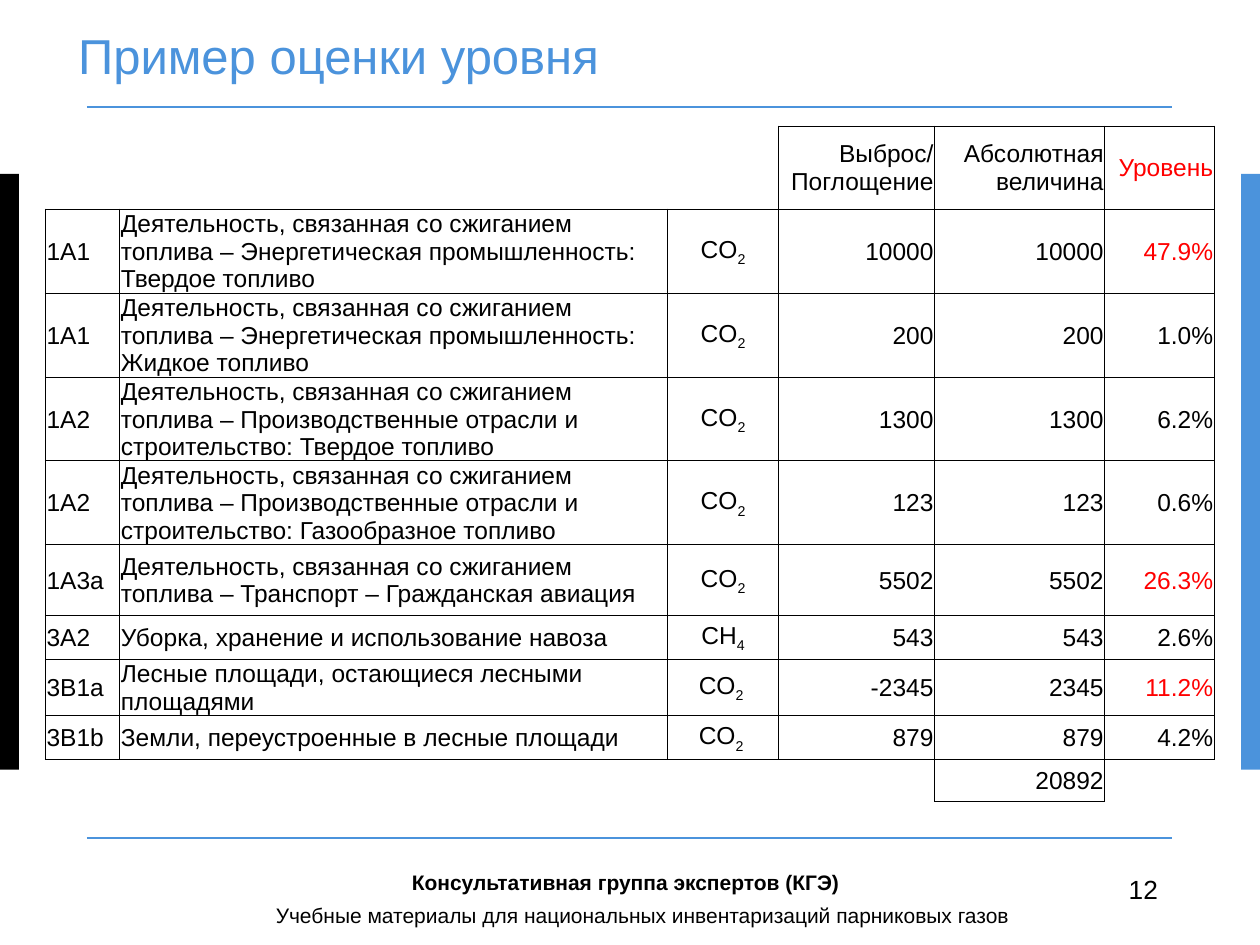
"""Build the slide with the worked example of a key category level assessment."""
import lxml.etree
import pptx
import pptx.dml.color
import pptx.enum.shapes
import pptx.enum.text
import pptx.oxml
import pptx.oxml.ns
import pptx.util

Inches = pptx.util.Inches
ALIGN = pptx.enum.text.PP_ALIGN
MIDDLE = pptx.enum.text.MSO_ANCHOR.MIDDLE
BLACK, BLUE, RED = "000000", "4B93DC", "FF0000"


def colour(value):
    return pptx.dml.color.RGBColor.from_string(value)


def add_run(paragraph, text, size, hue=BLACK, bold=False):
    run = paragraph.add_run()
    run.text = text
    values = {"name": "Arial", "size": pptx.util.Pt(size), "bold": bold}
    for attribute, value in values.items():
        setattr(run.font, attribute, value)
    run.font.color.rgb = colour(hue)
    return run


presentation = pptx.Presentation()
presentation.slide_width = Inches(10)
presentation.slide_height = Inches(7.5)
slide = presentation.slides.add_slide(presentation.slide_layouts[5])

for left, hue in ((0, BLACK), (9.85, BLUE)):
    side_bar = slide.shapes.add_shape(
        pptx.enum.shapes.MSO_SHAPE.RECTANGLE,
        Inches(left), Inches(1.38), Inches(0.15), Inches(4.73))
    side_bar.shadow.inherit = False
    side_bar.fill.solid()
    side_bar.fill.fore_color.rgb = colour(hue)
    side_bar.line.fill.background()

for y in (0.85, 6.65):
    rule = slide.shapes.add_connector(
        pptx.enum.shapes.MSO_CONNECTOR.STRAIGHT,
        Inches(0.69), Inches(y), Inches(9.3), Inches(y))
    rule.line.color.rgb = colour(BLUE)
    rule.line.width = pptx.util.Pt(1)
    lxml.etree.SubElement(rule._element.spPr, pptx.oxml.ns.qn("a:effectLst"))

fuel = "Деятельность, связанная со сжиганием топлива – "
energy = fuel + "Энергетическая промышленность: "
industry = fuel + "Производственные отрасли и строительство: "
rows = [
    ("", "", "", "Выброс/ Поглощение", "Абсолютная величина", "Уровень"),
    ("1A1", energy + "Твердое топливо", "CO2", "10000", "10000", "47.9%"),
    ("1A1", energy + "Жидкое топливо", "CO2", "200", "200", "1.0%"),
    ("1A2", industry + "Твердое топливо", "CO2", "1300", "1300", "6.2%"),
    ("1A2", industry + "Газообразное топливо", "CO2", "123", "123", "0.6%"),
    ("1A3a", fuel + "Транспорт – Гражданская авиация", "CO2", "5502", "5502", "26.3%"),
    ("3A2", "Уборка, хранение и использование навоза", "CH4", "543", "543", "2.6%"),
    ("3B1a", "Лесные площади, остающиеся лесными площадями", "CO2 ", "-2345", "2345", "11.2%"),
    ("3B1b", "Земли, переустроенные в лесные площади", "CO2 ", "879", "879", "4.2%"),
    ("", "", "", "", "20892", ""),
]
key_levels = {"Уровень", "47.9%", "26.3%", "11.2%"}
column_widths = [0.59, 4.35, 0.88, 1.24, 1.35, 0.87]
row_heights = [0.66] + [0.56] * 5 + [0.35] * 3 + [0.33]
alignments = [ALIGN.LEFT, ALIGN.LEFT, ALIGN.CENTER] + [ALIGN.RIGHT] * 3
neighbours = {"lnL": (0, -1), "lnR": (0, 1), "lnT": (-1, 0), "lnB": (1, 0)}
filled = {(r, c) for r, row in enumerate(rows) for c, text in enumerate(row) if text}
cell_format = {
    "margin_left": Inches(0.01), "margin_right": Inches(0.01),
    "margin_top": Inches(0.01), "margin_bottom": 0, "vertical_anchor": MIDDLE,
}

assessment = slide.shapes.add_table(
    len(rows), len(column_widths), Inches(0.36), Inches(1),
    Inches(sum(column_widths)), Inches(sum(row_heights))).table
assessment.first_row = False
assessment.horz_banding = False
for column, width in zip(assessment.columns, column_widths):
    column.width = Inches(width)
for table_row, height in zip(assessment.rows, row_heights):
    table_row.height = Inches(height)

for r, row in enumerate(rows):
    for c, text in enumerate(row):
        cell = assessment.cell(r, c)
        for attribute, value in cell_format.items():
            setattr(cell, attribute, value)
        for side, (down, across) in neighbours.items():
            bordered = filled & {(r, c), (r + down, c + across)}
            paint = (f'<a:solidFill><a:srgbClr val="{BLACK}"/></a:solidFill>'
                     if bordered else "<a:noFill/>")
            cell._tc.get_or_add_tcPr().append(pptx.oxml.parse_xml(
                f'<a:{side} {pptx.oxml.ns.nsdecls("a")} w="6350">{paint}</a:{side}>'))
        cell.fill.background()
        if not text:
            continue
        paragraph = cell.text_frame.paragraphs[0]
        paragraph.alignment = alignments[c]
        if c == 2:
            add_run(paragraph, text[:2], 14)
            subscript = add_run(paragraph, text[2:], 14)
            subscript.font._element.set("baseline", "-25000")
        else:
            add_run(paragraph, text, 14, RED if text in key_levels else BLACK)

title = slide.shapes.title
title_place = {"left": 0.62, "top": 0.29, "width": 8.66, "height": 0.55}
for attribute, value in title_place.items():
    setattr(title, attribute, Inches(value))
title_format = {
    "margin_left": 0, "margin_right": 0, "margin_top": 0, "margin_bottom": 0,
    "vertical_anchor": MIDDLE, "word_wrap": True,
    "auto_size": pptx.enum.text.MSO_AUTO_SIZE.NONE,
}
for attribute, value in title_format.items():
    setattr(title.text_frame, attribute, value)
heading = title.text_frame.paragraphs[0]
heading.alignment = ALIGN.LEFT
heading.line_spacing = pptx.util.Pt(15)
add_run(heading, "Пример оценки уровня", 28, BLUE)

footers = [
    ("12", (8.86, 6.88, 0.47, 0.35), 15, False),
    ("Учебные материалы для национальных инвентаризаций парниковых газов",
     (2.09, 7.11, 6.52, 0.32), 12, False),
    ("Консультативная группа экспертов (КГЭ)", (3.17, 6.85, 4.34, 0.27), 12, True),
]
for text, place, size, bold in footers:
    footer = slide.shapes.add_textbox(*map(Inches, place)).text_frame
    footer.word_wrap = True
    add_run(footer.paragraphs[0], text, size, bold=bold)

presentation.save("out.pptx")
